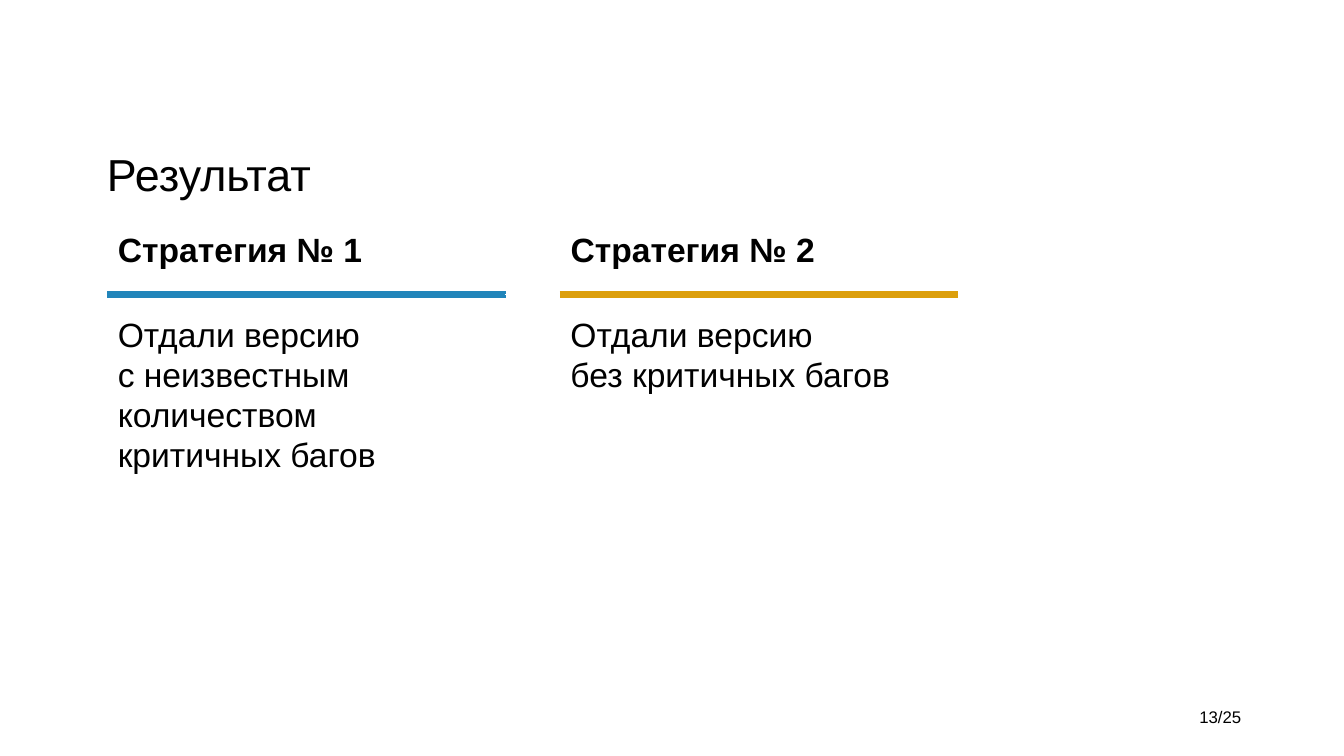
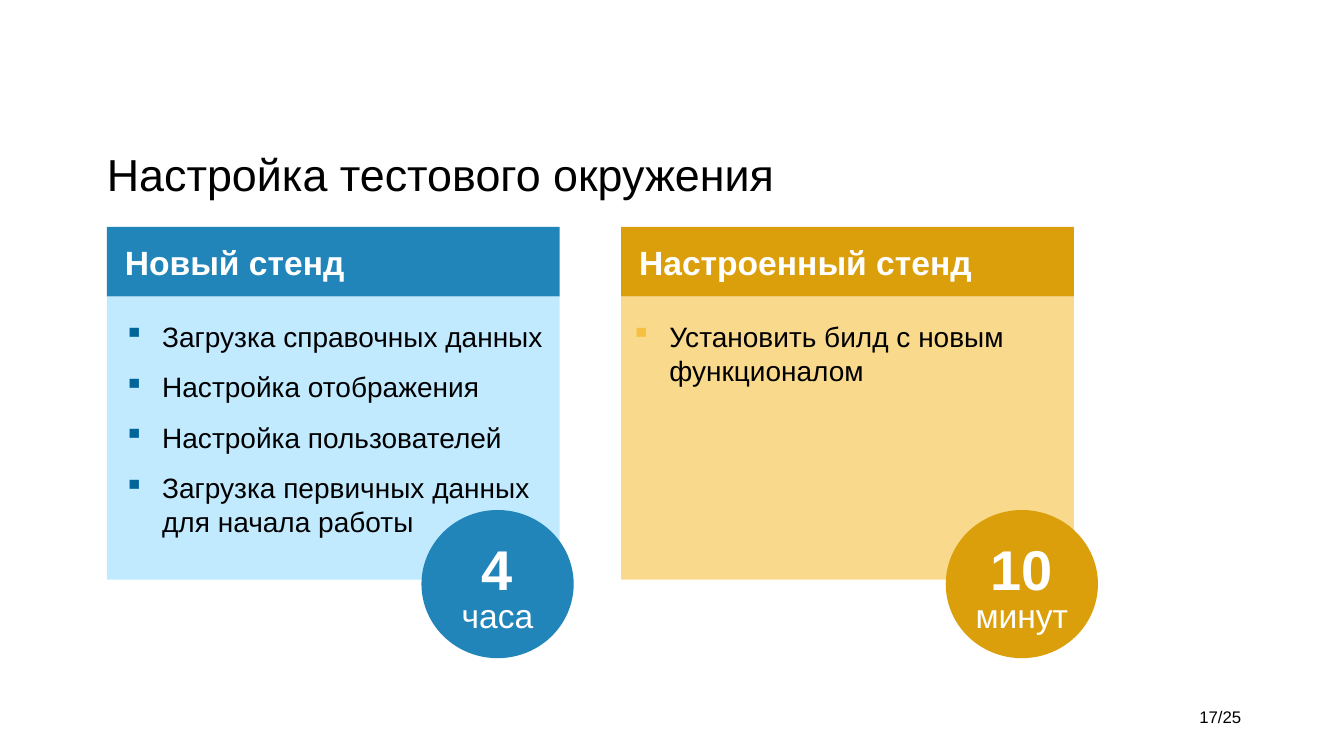
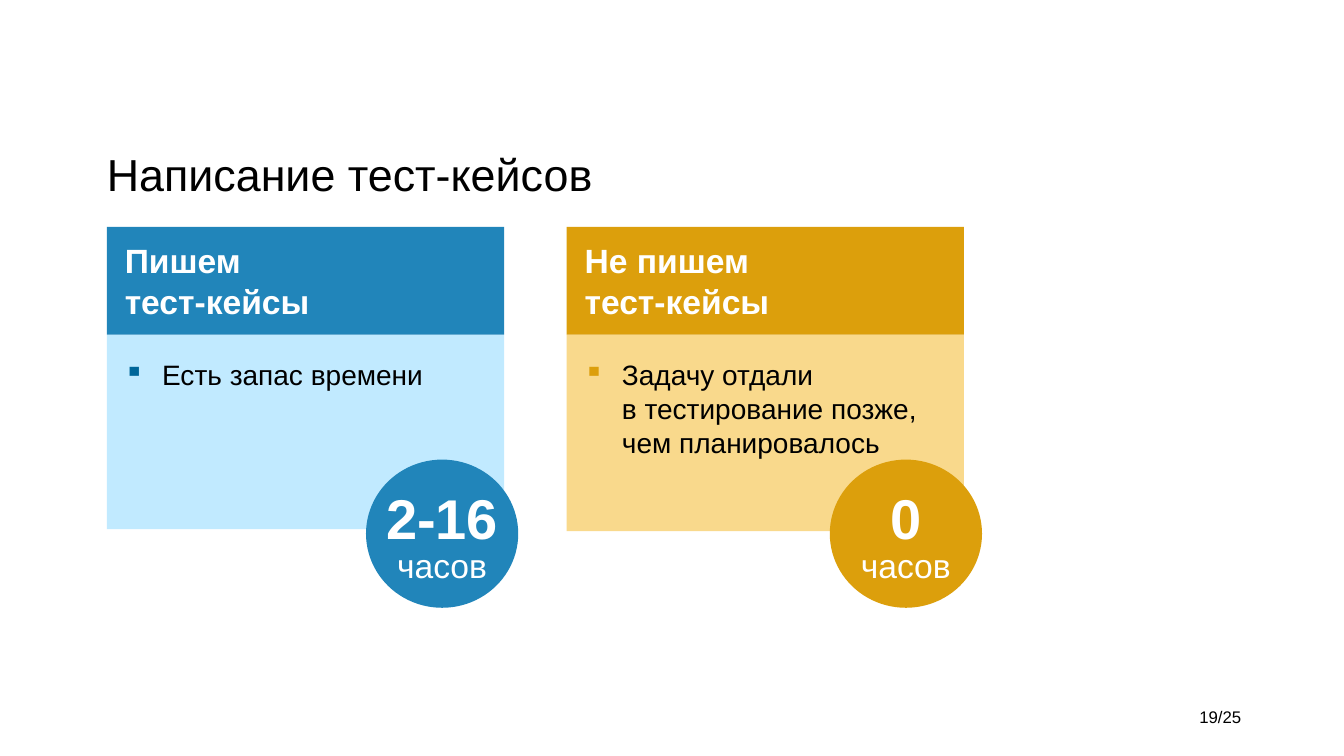
"""Build three slides that compare two testing strategies."""
import lxml.etree
import pptx
import pptx.dml.color
import pptx.enum.shapes
import pptx.enum.text
import pptx.oxml.ns
import pptx.util

Inches = pptx.util.Inches
Pt = pptx.util.Pt
RGBColor = pptx.dml.color.RGBColor
Align = pptx.enum.text.PP_ALIGN
Anchor = pptx.enum.text.MSO_ANCHOR
Shape = pptx.enum.shapes.MSO_SHAPE
qn = pptx.oxml.ns.qn

BLACK = RGBColor(0x00, 0x00, 0x00)
WHITE = RGBColor(0xFF, 0xFF, 0xFF)
BLUE = RGBColor(0x21, 0x85, 0xBA)
SKY = RGBColor(0xC1, 0xEA, 0xFF)
NAVY = RGBColor(0x00, 0x66, 0x99)
GOLD = RGBColor(0xDC, 0x9F, 0x0C)
SAND = RGBColor(0xF9, 0xD9, 0x8C)
AMBER = RGBColor(0xF5, 0xC0, 0x40)
FONT = "Arial"
LEFT, TOP = 1.06, 2.25


def style(para, size, color=BLACK, bold=False, align=Align.LEFT):
    """Set the font and alignment of a paragraph."""
    para.alignment = align
    font = para.font
    font.name, font.size, font.bold = FONT, Pt(size), bold
    font.color.rgb = color


def fill(frame, lines):
    """Put one paragraph per line into a text frame and return them."""
    for num, line in enumerate(lines):
        para = frame.add_paragraph() if num else frame.paragraphs[0]
        para.text = line
    return frame.paragraphs


def label(slide, box, lines, anchor=Anchor.TOP):
    """Add a wrapped text box and return its paragraphs."""
    frame = slide.shapes.add_textbox(*map(Inches, box)).text_frame
    frame.word_wrap = True
    frame.vertical_anchor = anchor
    return fill(frame, lines)


def block(slide, kind, box, color):
    """Add a flat shape of one colour."""
    shape = slide.shapes.add_shape(kind, *map(Inches, box))
    shape.shadow.inherit = False
    shape.fill.solid()
    shape.fill.fore_color.rgb = color
    shape.line.fill.background()
    return shape


def bullet(para, color):
    """Give a paragraph a hanging square bullet."""
    props = para._p.get_or_add_pPr()
    props.set("marL", str(Inches(0.38)))
    props.set("indent", str(Inches(-0.38)))
    tint = lxml.etree.SubElement(props, qn("a:buClr"))
    lxml.etree.SubElement(tint, qn("a:srgbClr"), val=str(color))
    lxml.etree.SubElement(props, qn("a:buChar"), char="▪")


def border(cell, side, color):
    """Draw a thick line on one side of a table cell."""
    props = cell._tc.get_or_add_tcPr()
    line = lxml.etree.Element(qn("a:" + side), w=str(Pt(6)))
    solid = lxml.etree.SubElement(line, qn("a:solidFill"))
    lxml.etree.SubElement(solid, qn("a:srgbClr"), val=str(color))
    props.insert(0, line)


def page(deck, title, number):
    """Add a slide with its title and page number."""
    slide = deck.slides.add_slide(deck.slide_layouts[5])
    head = slide.shapes.title
    head.left, head.top = Inches(0.96), Inches(1.36)
    head.width, head.height = Inches(9.2), Inches(0.73)
    head.text_frame.vertical_anchor = Anchor.MIDDLE
    style(fill(head.text_frame, [title])[0], 32)
    foot = label(slide, (10.97, 6.97, 1.44, 0.29), [f"{number}/25"],
                 Anchor.BOTTOM)
    style(foot[0], 12, align=Align.RIGHT)
    return slide


def grid(slide, heads):
    """Add the table of underlined column heads."""
    box = map(Inches, (1.07, TOP, 8.43, 2.44))
    table = slide.shapes.add_table(2, 3, *box).table
    table.first_row = table.horz_banding = False
    for col, width in zip(table.columns, (3.94, 0.55, 3.94)):
        col.width = Inches(width)
    for row, height in zip(table.rows, (0.67, 1.77)):
        row.height = Inches(height)
    for cell in table.iter_cells():
        cell.fill.background()
    for col, (text, color) in zip((0, 2), heads):
        cell = table.cell(0, col)
        style(fill(cell.text_frame, [text])[0], 24, bold=True)
        border(cell, "lnB", color)
        border(table.cell(1, col), "lnT", color)


def badge(slide, left, top, color, count, unit):
    """Add a round badge with a number above its unit."""
    disc = block(slide, Shape.OVAL, (left, top, 1.51, 1.47), color)
    frame = disc.text_frame
    frame.word_wrap = False
    frame.vertical_anchor = Anchor.MIDDLE
    frame.margin_left = frame.margin_right = frame.margin_bottom = 0
    frame.margin_top = Inches(0.18)
    big, small = fill(frame, [count, unit])
    style(big, 40, WHITE, True, Align.CENTER)
    style(small, 24, WHITE, align=Align.CENTER)
    big.line_spacing, small.line_spacing = Pt(36), Pt(24)


def card(slide, left, width, tall, base, tones, head, items, inset=0.07):
    """Add a card with a coloured head and a bulleted body."""
    dark, pale, mark = tones
    body = TOP + tall
    block(slide, Shape.RECTANGLE, (left, body, width, base - body), pale)
    bar = block(slide, Shape.RECTANGLE, (left, TOP, width, tall), dark)
    bar.text_frame.vertical_anchor = Anchor.MIDDLE
    title = fill(bar.text_frame, [head])[0]
    title._p.get_or_add_pPr().set("marL", str(Inches(0.08)))
    style(title, 24, WHITE, True)
    box = (left + inset, body + 0.18, width - inset, base - body - 0.3)
    for num, para in enumerate(label(slide, box, items)):
        if num:
            para.space_before = Pt(12)
        bullet(para, mark)
        style(para, 20)


def main():
    """Build and save the deck."""
    deck = pptx.Presentation()
    deck.slide_width, deck.slide_height = Inches(13.33), Inches(7.5)

    slide = page(deck, "Результат", 13)
    grid(slide, [("Стратегия № 1", BLUE), ("Стратегия № 2", GOLD)])
    notes = [
        ((1.07, 3.06, 3.1, 1.72),
         "Отдали версию\vс неизвестным\vколичеством\vкритичных багов"),
        ((5.56, 3.06, 3.61, 0.91), "Отдали версию\vбез критичных багов"),
    ]
    for box, text in notes:
        style(label(slide, box, [text])[0], 24)

    cool, warm = (BLUE, SKY, NAVY), (GOLD, SAND, GOLD)
    slide = page(deck, "Настройка тестового окружения", 17)
    card(slide, LEFT, 4.49, 0.69, 5.75, cool, "Новый стенд", [
        "Загрузка справочных данных",
        "Настройка отображения",
        "Настройка пользователей",
        "Загрузка первичных данных\vдля начала работы",
    ])
    card(slide, 6.16, 4.49, 0.69, 5.75, (GOLD, SAND, AMBER),
         "Настроенный стенд", ["Установить билд с новым функционалом"], 0)
    badge(slide, 4.18, 5.06, BLUE, "4", "часа")
    badge(slide, 9.38, 5.06, GOLD, "10", "минут")

    slide = page(deck, "Написание тест-кейсов", 19)
    card(slide, LEFT, 3.94, 1.07, 5.25, cool, "Пишем\vтест-кейсы",
         ["Есть запас времени"])
    card(slide, 5.62, 3.94, 1.07, 5.27, warm, "Не пишем\vтест-кейсы",
         ["Задачу отдали\vв тестирование позже,\vчем планировалось"])
    badge(slide, 3.63, 4.56, BLUE, "2-16", "часов")
    badge(slide, 8.23, 4.56, GOLD, "0", "часов")
    deck.save("out.pptx")


if __name__ == "__main__":
    main()
